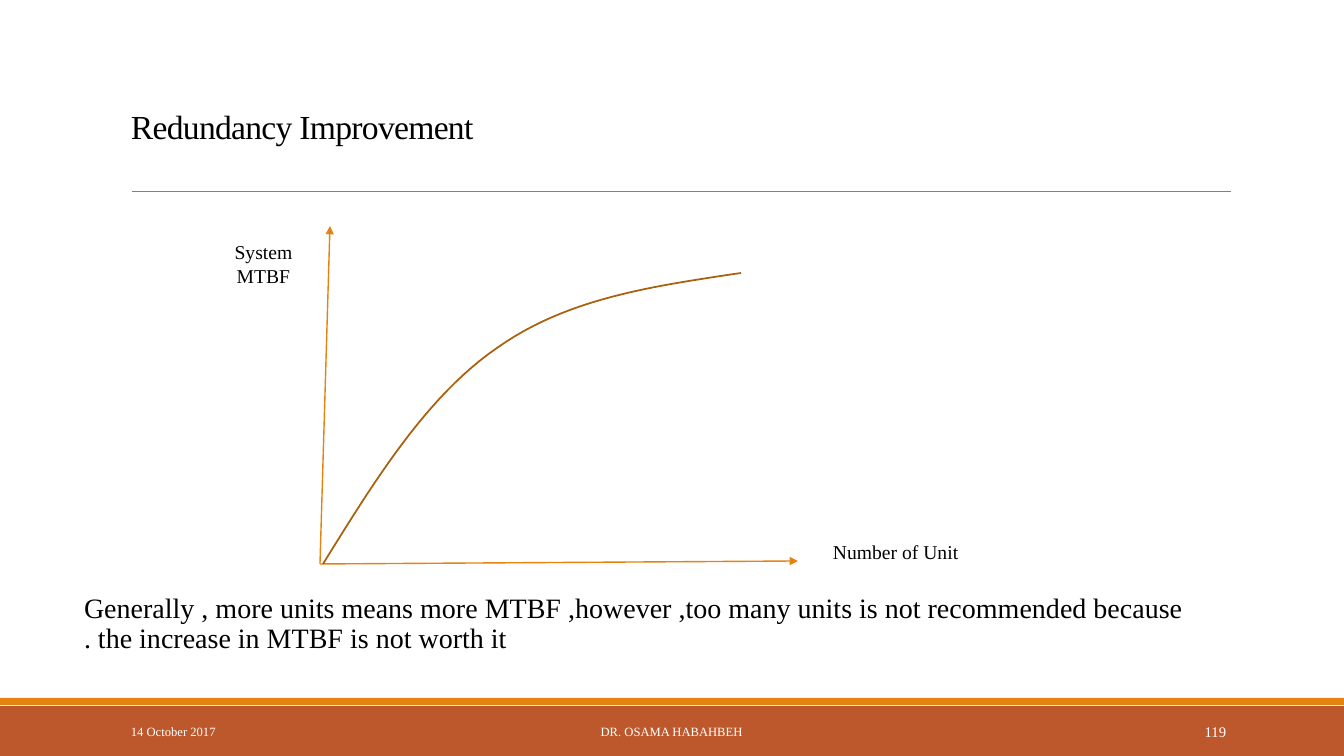
from lxml import etree
from pptx import Presentation
from pptx.dml.color import RGBColor
from pptx.enum.shapes import MSO_CONNECTOR, MSO_SHAPE
from pptx.enum.text import MSO_ANCHOR, PP_ALIGN
from pptx.oxml.ns import qn
from pptx.util import Pt

EMU_PER_PX = 914400 / 100.8
SLIDE_WIDTH, SLIDE_HEIGHT = 1344, 756
BLANK_LAYOUT = 6
FONT = "Times New Roman"
CURVE_STEPS = 24

BLACK = RGBColor(0x00, 0x00, 0x00)
WHITE = RGBColor(0xFF, 0xFF, 0xFF)
GREY = RGBColor(0x80, 0x80, 0x80)
RUST = RGBColor(0xBD, 0x58, 0x2C)
ORANGE = RGBColor(0xE4, 0x83, 0x12)
BROWN = RGBColor(0xA9, 0x61, 0x0D)

STRAIGHT = MSO_CONNECTOR.STRAIGHT
RECTANGLE = MSO_SHAPE.RECTANGLE
TOP, MIDDLE, BOTTOM = MSO_ANCHOR.TOP, MSO_ANCHOR.MIDDLE, MSO_ANCHOR.BOTTOM
LEFT, CENTER, RIGHT = PP_ALIGN.LEFT, PP_ALIGN.CENTER, PP_ALIGN.RIGHT


def px(length):
    return round(length * EMU_PER_PX)


def apply_format(target, values):
    for attribute, value in values.items():
        setattr(target, attribute, value)


def add_text(slide, box, lines, size, color=BLACK, spacing=0, frame=None, paragraph=None):
    text_frame = slide.shapes.add_textbox(*map(px, box)).text_frame
    apply_format(text_frame, {"word_wrap": True, "vertical_anchor": TOP, **(frame or {})})
    for index, line in enumerate(lines):
        row = text_frame.add_paragraph() if index else text_frame.paragraphs[0]
        apply_format(row, paragraph or {})
        run = row.add_run()
        run.text = line
        apply_format(run.font, {"name": FONT, "size": Pt(size)})
        run.font.color.rgb = color
        if spacing:
            run.font._element.set("spc", str(round(spacing * 100)))


def add_band(slide, top, height, color):
    band = slide.shapes.add_shape(RECTANGLE, 0, px(top), px(SLIDE_WIDTH), px(height))
    band.shadow.inherit = False
    band.fill.solid()
    band.fill.fore_color.rgb = color
    band.line.fill.background()


def add_line(slide, start, end, color, width, arrow=False):
    line = slide.shapes.add_connector(STRAIGHT, *map(px, start + end))
    line.line.color.rgb = color
    line.line.width = Pt(width)
    properties = line._element.spPr
    if arrow:
        etree.SubElement(properties.find(qn("a:ln")), qn("a:tailEnd"), type="triangle")
    etree.SubElement(properties, qn("a:effectLst"))


def bezier_point(controls, t):
    weights = ((1 - t) ** 3, 3 * t * (1 - t) ** 2, 3 * t * t * (1 - t), t ** 3)
    return tuple(
        px(sum(weight * point[axis] for weight, point in zip(weights, controls)))
        for axis in (0, 1)
    )


def add_curve(slide, controls, color, width):
    points = [
        bezier_point(controls[first:first + 4], step / CURVE_STEPS)
        for first in range(0, len(controls) - 1, 3)
        for step in range(CURVE_STEPS + 1)
    ]
    builder = slide.shapes.build_freeform(*points[0])
    builder.add_line_segments(points[1:], close=False)
    curve = builder.convert_to_shape()
    curve.shadow.inherit = False
    curve.fill.background()
    curve.line.color.rgb = color
    curve.line.width = Pt(width)


def add_heading(slide):
    add_line(slide, (132, 191), (1231, 191), GREY, 0.5)
    add_text(slide, (121, 31, 1109, 160), ["Redundancy Improvement"], 24, spacing=-0.5,
             frame={"vertical_anchor": BOTTOM, "margin_bottom": px(45)},
             paragraph={"line_spacing": 0.85})


def add_mtbf_graph(slide):
    origin = (320, 564)
    for tip in ((330, 226), (798, 561)):
        add_line(slide, origin, tip, ORANGE, 1, arrow=True)
    add_curve(slide, ((323, 564), (375, 480), (427, 396), (497, 348),
                      (567, 298), (654, 286), (741, 273)), BROWN, 1.25)
    add_text(slide, (224, 235, 79, 57), ["System", "MTBF"], 14,
             frame={"word_wrap": False}, paragraph={"alignment": CENTER})
    add_text(slide, (823, 535, 146, 34), ["Number of Unit"], 14, frame={"word_wrap": False})


def add_conclusion(slide):
    add_text(slide, (84, 589, 1109, 103),
             ["Generally , more units means more MTBF ,however ,too many units is not "
              "recommended because . the increase in MTBF is not worth it"], 20,
             frame={"margin_left": 0, "margin_right": px(8)},
             paragraph={"line_spacing": 0.9, "space_before": Pt(12), "space_after": Pt(2)})


def add_footer(slide):
    add_band(slide, 706, 50, RUST)
    add_band(slide, 698, 7, ORANGE)
    for left, width, text, size, alignment in (
        (121, 272, "14 October 2017", 9, LEFT),
        (406, 531, "DR. OSAMA HABAHBEH", 9, CENTER),
        (1092, 144, "119", 10.5, RIGHT),
    ):
        add_text(slide, (left, 712, width, 40), [text], size, WHITE,
                 frame={"vertical_anchor": MIDDLE}, paragraph={"alignment": alignment})


def main():
    presentation = Presentation()
    apply_format(presentation, {"slide_width": px(SLIDE_WIDTH), "slide_height": px(SLIDE_HEIGHT)})
    slide = presentation.slides.add_slide(presentation.slide_layouts[BLANK_LAYOUT])
    add_footer(slide)
    add_heading(slide)
    add_conclusion(slide)
    add_mtbf_graph(slide)
    presentation.save("out.pptx")


if __name__ == "__main__":
    main()
